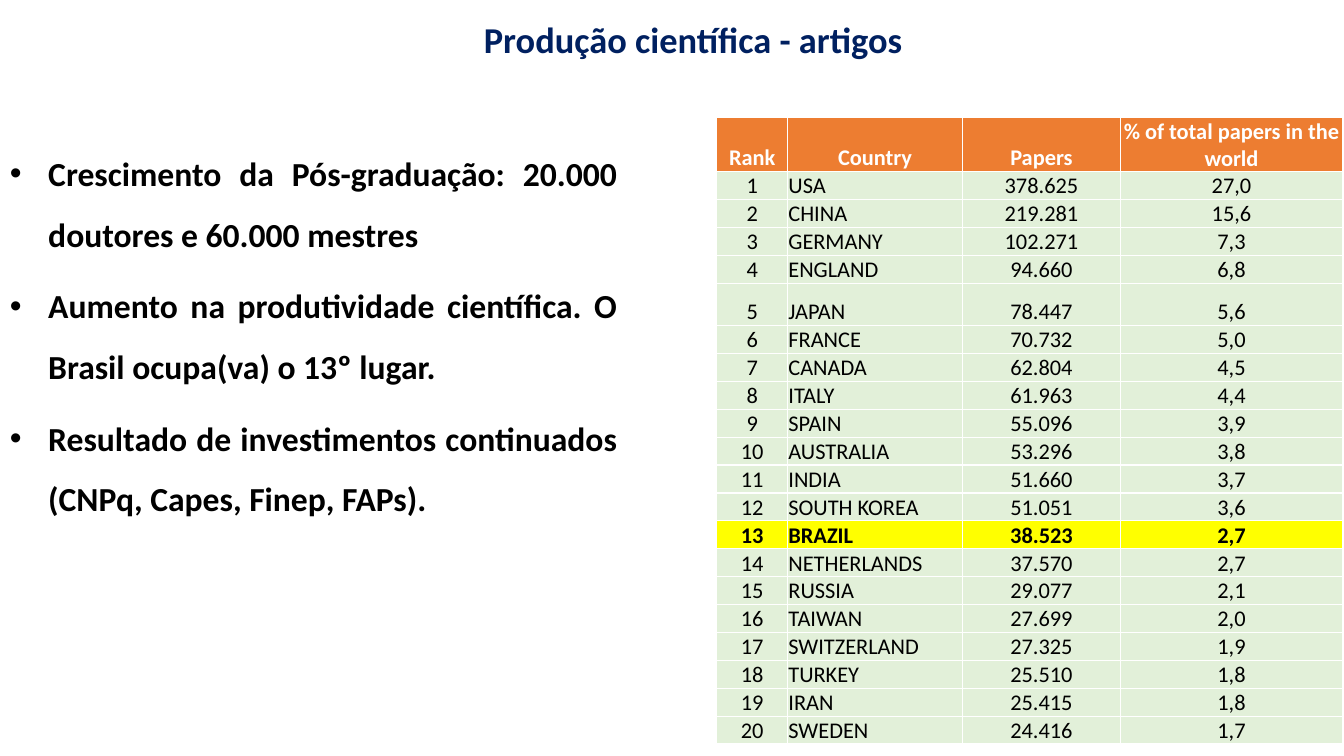
from lxml import etree
from pptx import Presentation
from pptx.dml.color import RGBColor
from pptx.enum import text
from pptx.oxml import parse_xml
from pptx.oxml.ns import nsdecls, qn
from pptx.util import Inches, Pt

FONT = "Calibri"
NAVY = RGBColor(0x00, 0x20, 0x60)
BLACK = RGBColor(0x00, 0x00, 0x00)
WHITE = RGBColor(0xFF, 0xFF, 0xFF)
ORANGE = RGBColor(0xED, 0x7D, 0x31)
GREEN = RGBColor(0xE2, 0xF0, 0xD9)
YELLOW = RGBColor(0xFF, 0xFF, 0x00)

TITLE = "Produção científica - artigos"
POINTS = [
    "Crescimento da Pós-graduação: 20.000 doutores e 60.000 mestres",
    "Aumento na produtividade científica. O Brasil ocupa(va) o 13º lugar.",
    "Resultado de investimentos continuados (CNPq, Capes, Finep, FAPs).",
]
HEADERS = ["Rank", "Country", "Papers", "% of total papers in the world"]
COUNTRIES = [
    ("USA", "378.625", "27,0"),
    ("CHINA", "219.281", "15,6"),
    ("GERMANY", "102.271", "7,3"),
    ("ENGLAND", "94.660", "6,8"),
    ("JAPAN", "78.447", "5,6"),
    ("FRANCE", "70.732", "5,0"),
    ("CANADA", "62.804", "4,5"),
    ("ITALY", "61.963", "4,4"),
    ("SPAIN", "55.096", "3,9"),
    ("AUSTRALIA", "53.296", "3,8"),
    ("INDIA", "51.660", "3,7"),
    ("SOUTH KOREA", "51.051", "3,6"),
    ("BRAZIL", "38.523", "2,7"),
    ("NETHERLANDS", "37.570", "2,7"),
    ("RUSSIA", "29.077", "2,1"),
    ("TAIWAN", "27.699", "2,0"),
    ("SWITZERLAND", "27.325", "1,9"),
    ("TURKEY", "25.510", "1,8"),
    ("IRAN", "25.415", "1,8"),
    ("SWEDEN", "24.416", "1,7"),
]
HIGHLIGHT = "BRAZIL"
COL_WIDTHS = [0.7, 1.74, 1.56, 2.21]
ROW_HEIGHT = 0.25
TALL_ROWS = {0: 0.5, 5: 0.42}


def style_run(r, size, color, bold):
    r.font.name = FONT
    r.font.size = Pt(size)
    r.font.bold = bold
    r.font.color.rgb = color


def add_bullet(p, indent):
    pPr = p._p.get_or_add_pPr()
    pPr.set("marL", str(Inches(indent)))
    pPr.set("indent", str(-Inches(indent)))
    etree.SubElement(pPr, qn("a:buFont")).set("typeface", "Arial")
    etree.SubElement(pPr, qn("a:buChar")).set("char", "•")


def add_borders(cell, color, width):
    tcPr = cell._tc.get_or_add_tcPr()
    for side in ("lnL", "lnR", "lnT", "lnB"):
        tcPr.append(parse_xml(
            f'<a:{side} {nsdecls("a")} w="{Pt(width)}"><a:solidFill>'
            f'<a:srgbClr val="{color}"/></a:solidFill></a:{side}>'))


def add_title(slide, x, y, w, h):
    tf = slide.shapes.add_textbox(Inches(x), Inches(y), Inches(w), Inches(h)).text_frame
    tf.word_wrap = False
    tf.auto_size = text.MSO_AUTO_SIZE.SHAPE_TO_FIT_TEXT
    tf.text = TITLE
    style_run(tf.paragraphs[0].runs[0], 26, NAVY, True)


def add_points(slide, x, y, w, h):
    tf = slide.shapes.add_textbox(Inches(x), Inches(y), Inches(w), Inches(h)).text_frame
    tf.word_wrap = True
    tf.auto_size = text.MSO_AUTO_SIZE.SHAPE_TO_FIT_TEXT
    for i, point in enumerate(POINTS):
        p = tf.add_paragraph() if i else tf.paragraphs[0]
        p.text = point
        add_bullet(p, 0.38)
        p.alignment = text.PP_ALIGN.JUSTIFY
        p.line_spacing = 1.5
        p.space_after = Pt(8)
        style_run(p.runs[0], 24, BLACK, True)


def fill_cell(cell, value, align, fill, color, bold):
    cell.margin_left = cell.margin_right = cell.margin_top = Inches(0.01)
    cell.margin_bottom = 0
    cell.vertical_anchor = text.MSO_ANCHOR.BOTTOM
    add_borders(cell, WHITE, 1)
    cell.fill.solid()
    cell.fill.fore_color.rgb = fill
    p = cell.text_frame.paragraphs[0]
    p.text = value
    p.alignment = align
    style_run(p.runs[0], 16, color, bold)


def add_ranking(slide, x, y, w, h):
    rows = [HEADERS] + [(str(n), *row) for n, row in enumerate(COUNTRIES, 1)]
    table = slide.shapes.add_table(len(rows), len(HEADERS), Inches(x), Inches(y),
                                   Inches(w), Inches(h)).table
    table.horz_banding = False
    for col, width in zip(table.columns, COL_WIDTHS):
        col.width = Inches(width)
    for i, values in enumerate(rows):
        table.rows[i].height = Inches(TALL_ROWS.get(i, ROW_HEIGHT))
        # Header, highlighted country or plain row
        if i == 0:
            look = (ORANGE, WHITE, True)
        elif values[1] == HIGHLIGHT:
            look = (YELLOW, BLACK, True)
        else:
            look = (GREEN, BLACK, False)
        for j, value in enumerate(values):
            is_name = i > 0 and j == 1
            align = text.PP_ALIGN.LEFT if is_name else text.PP_ALIGN.CENTER
            fill_cell(table.cell(i, j), value, align, *look)


def main():
    prs = Presentation()
    prs.slide_width = Inches(13.33)
    prs.slide_height = Inches(7.5)
    slide = prs.slides.add_slide(prs.slide_layouts[6])
    add_points(slide, 0, 1.27, 6.22, 3.9)
    add_ranking(slide, 7.11, 1.16, 6.22, 6.18)
    add_title(slide, 4.7, 0.12, 4.41, 0.54)
    prs.save("out.pptx")


if __name__ == "__main__":
    main()
